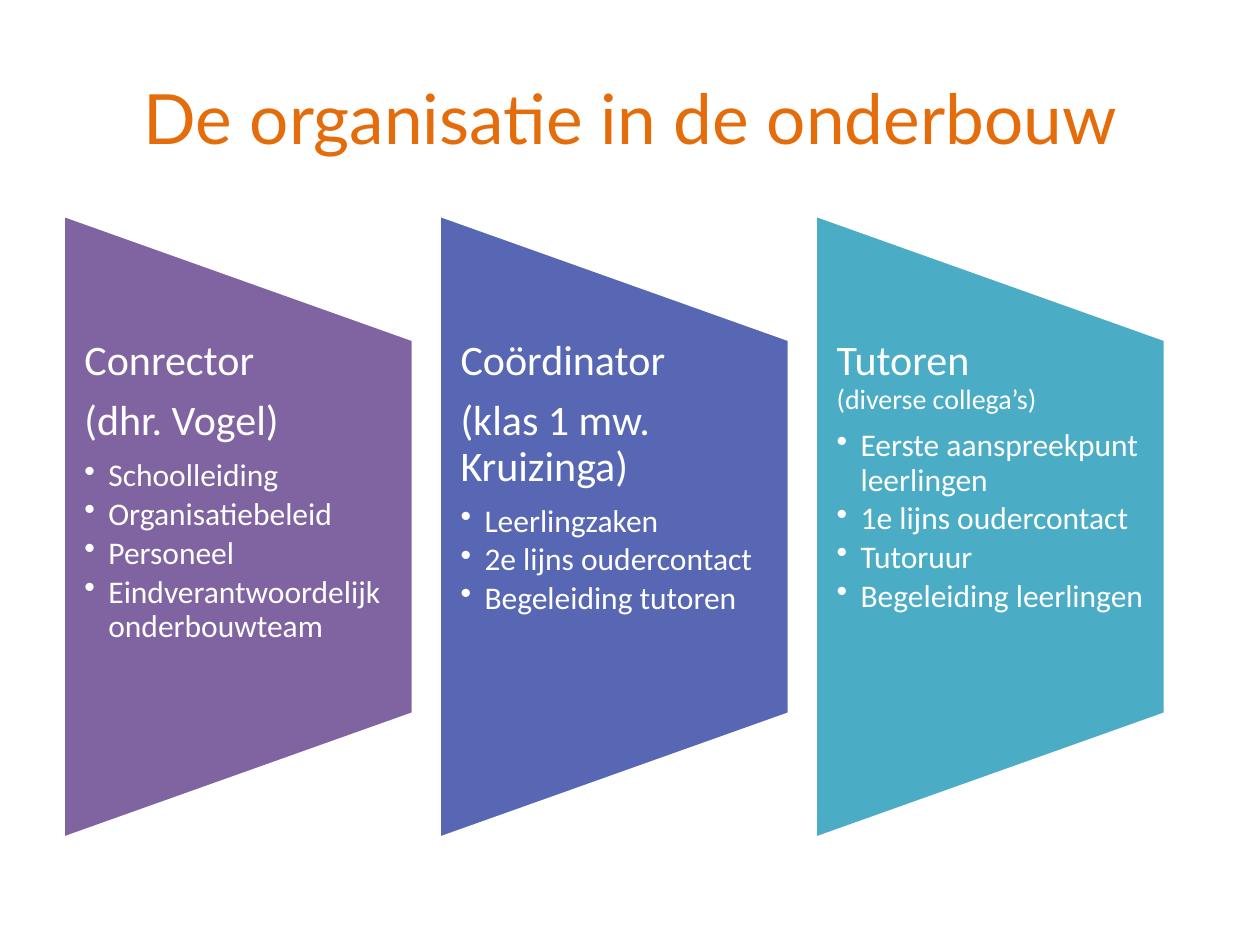
from lxml import etree
from pptx import Presentation, util as u
from pptx.dml.color import RGBColor
from pptx.enum import shapes, text
from pptx.oxml.ns import qn

ORANGE = RGBColor(0xE4, 0x6C, 0x0A)
PURPLE = RGBColor(0x80, 0x64, 0xA2)
INDIGO = RGBColor(0x57, 0x67, 0xB4)
TEAL = RGBColor(0x4B, 0xAC, 0xC6)
WHITE = RGBColor(0xFF, 0xFF, 0xFF)

TITLE = "De organisatie in de onderbouw"
ROLES = [
    {
        "fill": PURPLE,
        "headings": ["Conrector", "(dhr. Vogel)"],
        "tasks": ["Schoolleiding", "Organisatiebeleid", "Personeel",
                  "Eindverantwoordelijk onderbouwteam"],
    },
    {
        "fill": INDIGO,
        "headings": ["Coördinator", "(klas 1 mw. Kruizinga)"],
        "tasks": ["Leerlingzaken", "2e lijns oudercontact", "Begeleiding tutoren"],
    },
    {
        "fill": TEAL,
        "headings": ["Tutoren"],
        "subtitle": "(diverse collega’s)",
        "tasks": ["Eerste aanspreekpunt leerlingen", "1e lijns oudercontact",
                  "Tutoruur", "Begeleiding leerlingen"],
    },
]

SLIDE_WIDTH, SLIDE_HEIGHT = 10, 7.5
MARGIN = SLIDE_WIDTH * 0.05
PANEL_WIDTH, PANEL_HEIGHT = 2.78, 4.95
COLUMN_STEP = 2.985
PANEL_MIDDLE = 4.18
TEXT_HEIGHT = PANEL_HEIGHT * 0.6
BULLET_INDENT = 0.19


def add_box(slide, left, top, width, height, inset_x=0.1, inset_y=0.05):
    box = slide.shapes.add_textbox(*map(u.Inches, (left, top, width, height)))
    frame = box.text_frame
    frame.word_wrap = True
    frame.margin_left = frame.margin_right = u.Inches(inset_x)
    frame.margin_top = frame.margin_bottom = u.Inches(inset_y)
    return frame


def write(frame, content, size, color=WHITE, font="Calibri", align=text.PP_ALIGN.LEFT,
          spacing=0.9, after=0, bullet=False, subtitle=None, subtitle_size=16):
    first = frame.paragraphs[0]
    paragraph = frame.add_paragraph() if first.runs else first
    if bullet:
        properties = paragraph._p.get_or_add_pPr()
        properties.set("lvl", "1")
        properties.set("marL", str(u.Inches(BULLET_INDENT)))
        properties.set("indent", str(-u.Inches(BULLET_INDENT)))
        etree.SubElement(properties, qn("a:buChar")).set("char", "•")
    paragraph.alignment = align
    paragraph.line_spacing = spacing
    paragraph.space_after = u.Pt(after)
    paragraph.font.size = u.Pt(size)
    parts = [(content, size)]
    if subtitle:
        parts.append((subtitle, subtitle_size))
    for index, (words, points) in enumerate(parts):
        if index:
            paragraph.add_line_break()
        run = paragraph.add_run()
        run.text = words
        run.font.size = u.Pt(points)
        run.font.name = font
        run.font.color.rgb = color


def add_panel(slide, left, fill):
    center = left + PANEL_WIDTH / 2
    panel = slide.shapes.add_shape(
        shapes.MSO_SHAPE.FLOWCHART_MANUAL_OPERATION,
        u.Inches(center - PANEL_HEIGHT / 2), u.Inches(PANEL_MIDDLE - PANEL_WIDTH / 2),
        u.Inches(PANEL_HEIGHT), u.Inches(PANEL_WIDTH))
    panel.rotation = 270
    panel.shadow.inherit = False
    panel.fill.solid()
    panel.fill.fore_color.rgb = fill
    panel.line.color.rgb = WHITE
    panel.line.width = u.Pt(2)


def add_role(slide, column, role):
    left = MARGIN + column * COLUMN_STEP
    add_panel(slide, left, role["fill"])
    frame = add_box(slide, left, PANEL_MIDDLE - TEXT_HEIGHT / 2, PANEL_WIDTH, TEXT_HEIGHT,
                    inset_x=0.17, inset_y=0)
    for heading in role["headings"]:
        write(frame, heading, 24, after=8.4, subtitle=role.get("subtitle"))
    for task in role["tasks"]:
        write(frame, task, 18, after=2.7, bullet=True)


def main():
    presentation = Presentation()
    presentation.slide_width = u.Inches(SLIDE_WIDTH)
    presentation.slide_height = u.Inches(SLIDE_HEIGHT)
    slide = presentation.slides.add_slide(presentation.slide_layouts[6])
    title = add_box(slide, MARGIN, 0.3, SLIDE_WIDTH - 2 * MARGIN, 1.25)
    title.vertical_anchor = text.MSO_ANCHOR.MIDDLE
    write(title, TITLE, 39.6, color=ORANGE, font="Lato",
          align=text.PP_ALIGN.CENTER, spacing=1.0)
    for column, role in enumerate(ROLES):
        add_role(slide, column, role)
    presentation.save("out.pptx")


if __name__ == "__main__":
    main()
